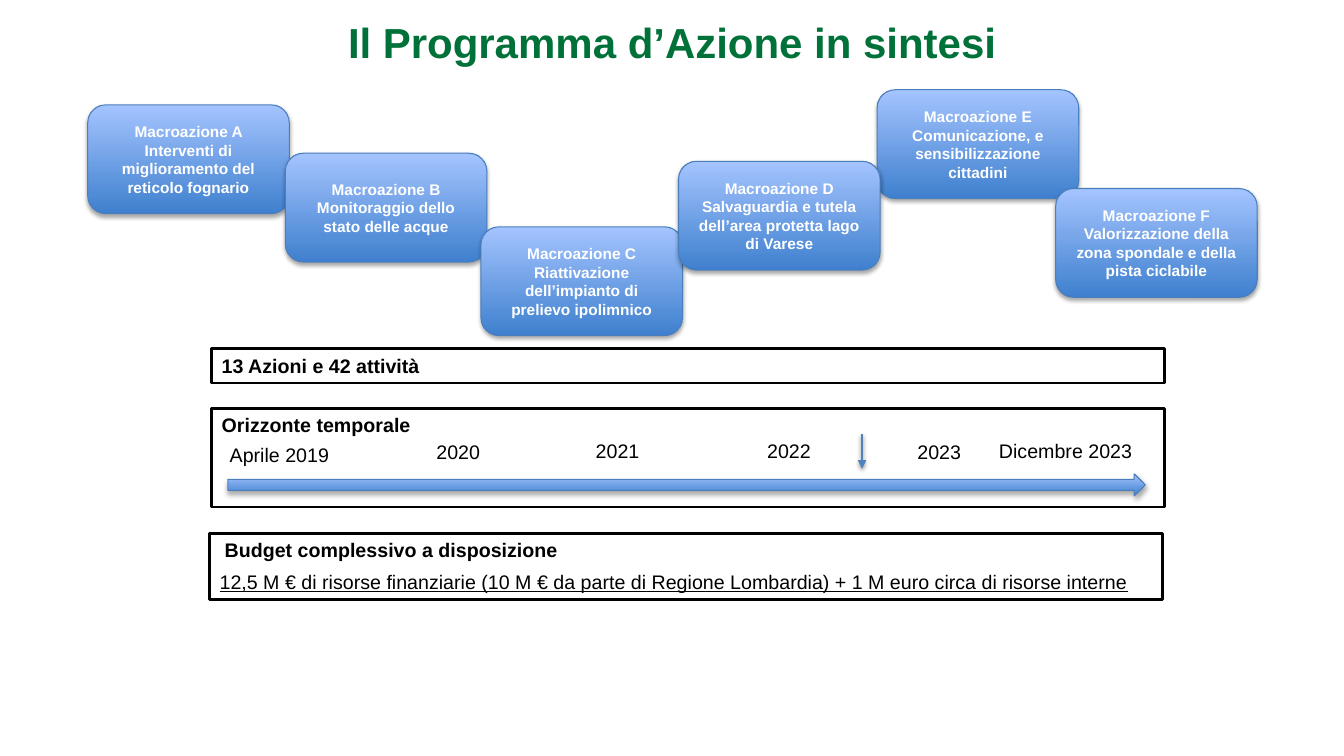
import pptx
import pptx.dml.color
import pptx.enum.shapes
import pptx.enum.text
import pptx.oxml
import pptx.oxml.ns
import pptx.util
from pptx.util import Inches

RGBColor = pptx.dml.color.RGBColor
ALIGN = pptx.enum.text.PP_ALIGN
ANCHOR = pptx.enum.text.MSO_ANCHOR
SHAPE = pptx.enum.shapes.MSO_SHAPE

GREEN = RGBColor(0x00, 0x72, 0x39)
DARK_BLUE = RGBColor(0x3F, 0x80, 0xCE)
LIGHT_BLUE = RGBColor(0xA4, 0xC4, 0xFF)
OUTLINE_BLUE = RGBColor(0x4B, 0x7E, 0xBC)
MARKER_BLUE = RGBColor(0x4F, 0x81, 0xBD)
BLACK = RGBColor(0, 0, 0)
WHITE = RGBColor(255, 255, 255)

CARD_WIDTH, CARD_HEIGHT = 2, 1.08
# Offsets from the region's corner, from back to front
MACRO_ACTIONS = [
    (0, 0.15, "Macroazione A Interventi di miglioramento del reticolo fognario"),
    (1.96, 0.63, "Macroazione B Monitoraggio dello stato delle acque"),
    (3.9, 1.36, "Macroazione C Riattivazione dell’impianto di prelievo ipolimnico"),
    (7.83, 0, "Macroazione E Comunicazione, e sensibilizzazione cittadini"),
    (5.86, 0.71, "Macroazione D Salvaguardia e tutela dell’area protetta lago di Varese"),
    (9.6, 0.98, "Macroazione F Valorizzazione della zona spondale e della pista ciclabile"),
]
# Offset from the timeline's corner, width, text
DATES = [
    (0.08, 0.29, 1.43, "Aprile 2019"),
    (2.13, 0.27, 0.81, "2020"),
    (3.71, 0.26, 0.81, "2021"),
    (5.41, 0.26, 0.81, "2022"),
    (6.9, 0.27, 0.81, "2023"),
    (7.71, 0.26, 1.76, "Dicembre 2023"),
]


def write(para, text, size=14, color=BLACK, bold=False, underline=False,
          align=ALIGN.LEFT, after=0):
    para.alignment = align
    para.space_after = pptx.util.Pt(after)
    span = para.add_run()
    span.text = text
    span.font.name = "Arial"
    span.font.size = pptx.util.Pt(size)
    span.font.color.rgb = color
    span.font.bold = bold
    span.font.underline = underline


def add_shadow(properties, opacity, distance):
    """Give a shape or connector a soft shadow that falls downwards."""
    properties.append(pptx.oxml.parse_xml(
        f'<a:effectLst {pptx.oxml.ns.nsdecls("a")}>'
        f'<a:outerShdw blurRad="{pptx.util.Pt(3.1)}" dist="{pptx.util.Pt(distance)}" '
        f'dir="5400000" rotWithShape="0"><a:srgbClr val="000000">'
        f'<a:alpha val="{opacity * 1000}"/></a:srgbClr></a:outerShdw></a:effectLst>'))


def add_blue_shape(page, kind, left, top, width, height):
    shape = page.shapes.add_shape(
        kind, Inches(left), Inches(top), Inches(width), Inches(height))
    shape.fill.gradient()
    shape.fill.gradient_angle = 90
    for stop, color in zip(shape.fill.gradient_stops, (DARK_BLUE, LIGHT_BLUE)):
        stop.color.rgb = color
    shape.line.color.rgb = OUTLINE_BLUE
    shape.line.width = pptx.util.Pt(0.75)
    add_shadow(shape._element.spPr, opacity=35, distance=1.8)
    return shape


def add_panel(page, left, top, width, height, heading):
    """Draw a black frame with a bold heading and return its text frame."""
    panel = page.shapes.add_shape(
        SHAPE.RECTANGLE, Inches(left), Inches(top), Inches(width), Inches(height))
    panel.shadow.inherit = False
    panel.fill.background()
    panel.line.color.rgb = BLACK
    panel.line.width = pptx.util.Pt(2)
    frame = panel.text_frame
    frame.word_wrap = True
    frame.vertical_anchor = ANCHOR.TOP
    write(frame.paragraphs[0], heading, bold=True, after=6)
    return frame


def add_title(page, left, top, width, height):
    title = page.shapes.title
    title.left, title.top = Inches(left), Inches(top)
    title.width, title.height = Inches(width), Inches(height)
    title.text_frame.vertical_anchor = ANCHOR.MIDDLE
    write(title.text_frame.paragraphs[0], "Il Programma d’Azione in sintesi",
          size=30, color=GREEN, bold=True, align=ALIGN.CENTER)


def add_macro_actions(page, left, top):
    for across, down, text in MACRO_ACTIONS:
        card = add_blue_shape(page, SHAPE.ROUNDED_RECTANGLE, left + across, top + down,
                              CARD_WIDTH, CARD_HEIGHT)
        card.text_frame.word_wrap = True
        card.text_frame.vertical_anchor = ANCHOR.MIDDLE
        write(card.text_frame.paragraphs[0], text, size=11, color=WHITE, bold=True,
              align=ALIGN.CENTER)


def add_timeline(page, left, top, width, height):
    add_panel(page, left, top, width, height, "Orizzonte temporale")
    add_blue_shape(page, SHAPE.RIGHT_ARROW, left + 0.16, top + 0.65, width - 0.35, 0.22)
    for across, down, label_width, text in DATES:
        box = page.shapes.add_textbox(Inches(left + across), Inches(top + down),
                                      Inches(label_width), Inches(0.34))
        box.text_frame.word_wrap = True
        write(box.text_frame.paragraphs[0], text, align=ALIGN.JUSTIFY, after=6)
    add_today_marker(page, left + 6.45, top + 0.26, 0.34)


def add_today_marker(page, left, top, length):
    marker = page.shapes.add_connector(
        pptx.enum.shapes.MSO_CONNECTOR.STRAIGHT,
        Inches(left), Inches(top), Inches(left), Inches(top + length))
    marker.line.color.rgb = MARKER_BLUE
    marker.line.width = pptx.util.Pt(2)
    marker.line._get_or_add_ln().append(pptx.oxml.parse_xml(
        f'<a:tailEnd {pptx.oxml.ns.nsdecls("a")} type="triangle"/>'))
    add_shadow(marker._element.spPr, opacity=38, distance=1.6)


def add_budget(page, left, top, width, height):
    frame = add_panel(page, left, top, width, height, "Budget complessivo a disposizione")
    frame.paragraphs[0]._p.get_or_add_pPr().set("marL", str(Inches(0.05)))
    write(frame.add_paragraph(),
          "12,5 M € di risorse finanziarie (10 M € da parte di Regione Lombardia)"
          " + 1 M euro circa di risorse interne",
          underline=True, align=ALIGN.JUSTIFY, after=6)


def main():
    deck = pptx.Presentation()
    deck.slide_width, deck.slide_height = Inches(13.33), Inches(7.5)
    page = deck.slides.add_slide(deck.slide_layouts.get_by_name("Title Only"))
    add_title(page, 2.42, 0, 8.5, 0.82)
    add_macro_actions(page, 0.87, 0.89)
    add_panel(page, 2.1, 3.46, 9.45, 0.34, "13 Azioni e 42 attività")
    add_timeline(page, 2.1, 4.05, 9.45, 0.98)
    add_budget(page, 2.08, 5.29, 9.45, 0.66)
    deck.save("out.pptx")


if __name__ == "__main__":
    main()
